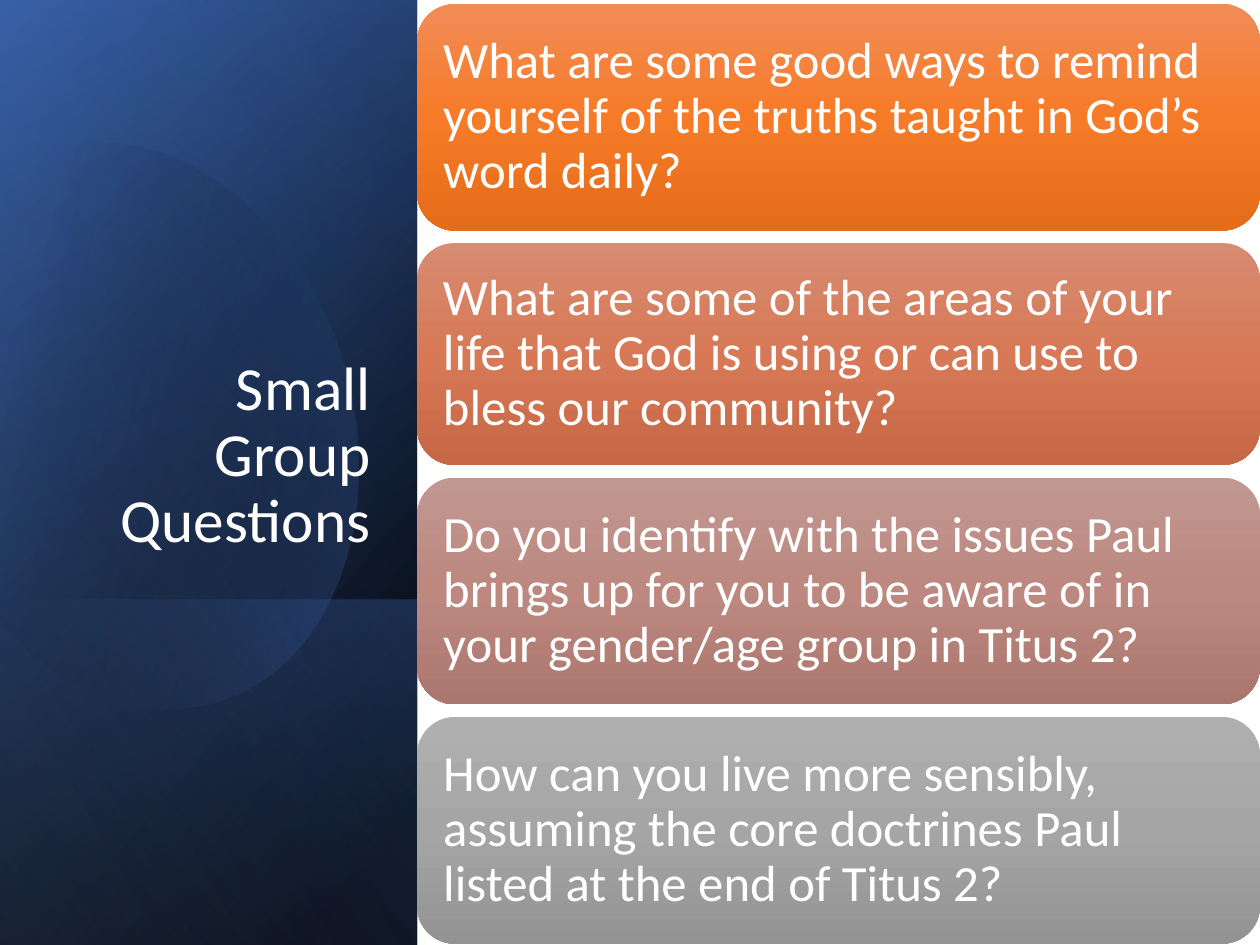
from math import cos, radians, sin

from pptx import Presentation
from pptx.dml.color import RGBColor
from pptx.enum.shapes import MSO_SHAPE as Shape
from pptx.enum.text import MSO_ANCHOR as Anchor, PP_ALIGN as Align
from pptx.oxml import parse_xml
from pptx.oxml.ns import nsdecls, qn
from pptx.util import Inches, Pt

FONT = "Calibri"
WHITE = RGBColor(0xFF, 0xFF, 0xFF)
BLACK = RGBColor(0x00, 0x00, 0x00)
BLUE = RGBColor(0x44, 0x72, 0xC4)
DARK_BLUE = RGBColor(0x2F, 0x55, 0x97)
LIGHT_BLUE = RGBColor(0x8F, 0xAA, 0xDC)

# Question, card height in inches, colours from top to bottom
QUESTIONS = [
    ("What are some good ways to remind yourself of the truths taught in God’s word daily?", 1.8,
     (RGBColor(0xF1, 0x8C, 0x57), RGBColor(0xF6, 0x7B, 0x28), RGBColor(0xE5, 0x6C, 0x19))),
    ("What are some of the areas of your life that God is using or can use to bless our community?", 1.76,
     (RGBColor(0xD7, 0x8B, 0x72), RGBColor(0xD7, 0x79, 0x56), RGBColor(0xC6, 0x68, 0x46))),
    ("Do you identify with the issues Paul brings up for you to be aware of in your gender/age group in Titus 2?", 1.8,
     (RGBColor(0xC1, 0x97, 0x91), RGBColor(0xBC, 0x88, 0x80), RGBColor(0xAA, 0x76, 0x6E))),
    ("How can you live more sensibly, assuming the core doctrines Paul listed at the end of Titus 2?", 1.8,
     (RGBColor(0xAF, 0xAF, 0xAF), RGBColor(0xA5, 0xA5, 0xA5), RGBColor(0x93, 0x93, 0x93))),
]

# Bezier segments of the glow: two controls and an end point each
GLOW_START = (0.96, 1.14)
GLOW_RIGHT = [
    ((1.71, 1.22), (2.44, 1.92), (2.73, 2.9)),
    ((3.07, 4.12), (2.62, 5.31), (1.71, 5.57)),
    ((1.14, 5.74), (0.53, 5.5), (0.07, 5)),
]
GLOW_LEFT_EDGE = [(-0.03, 4.88), (-0.25, 1.66), (-0.15, 1.54)]
GLOW_TOP = [
    ((0.02, 1.37), (0.22, 1.25), (0.45, 1.18)),
    ((0.62, 1.13), (0.79, 1.12), (0.96, 1.14)),
]
GLOW_CENTRE = (1.19, 3.35)
GLOW_ROTATION = 343.9


def fill_gradient(shape, stops, angle):
    """Fill with (position %, colour, opacity %) stops; no line, no shadow."""
    shape.shadow.inherit = False
    shape.line.fill.background()
    shape.fill.background()
    stop_xml = "".join(
        f'<a:gs pos="{position * 1000}"><a:srgbClr val="{colour}">'
        f'<a:alpha val="{opacity * 1000}"/></a:srgbClr></a:gs>'
        for position, colour, opacity in stops)
    gradient = parse_xml(
        f'<a:gradFill {nsdecls("a")} rotWithShape="1"><a:gsLst>{stop_xml}</a:gsLst>'
        f'<a:lin ang="{angle * 60000}" scaled="0"/></a:gradFill>')
    properties = shape._element.spPr
    properties.replace(properties.find(qn("a:noFill")), gradient)


def add_turned_panel(slide, left, top, width, height, stops, angle):
    """Add a mirrored rectangle turned by 90 degrees that covers the given box."""
    shift = (width - height) / 2
    panel = slide.shapes.add_shape(
        Shape.RECTANGLE, Inches(left + shift), Inches(top - shift),
        Inches(height), Inches(width))
    panel.rotation = 90
    panel._element.spPr.xfrm.set("flipH", "1")
    fill_gradient(panel, stops, angle)


def curve_points(start, segments, steps=16):
    """Sample a chain of cubic Bezier segments."""
    points = []
    for first, second, end in segments:
        for step in range(1, steps + 1):
            t = step / steps
            weights = ((1 - t) ** 3, 3 * t * (1 - t) ** 2, 3 * t * t * (1 - t), t ** 3)
            corners = (start, first, second, end)
            points.append(tuple(
                sum(weight * corner[axis] for weight, corner in zip(weights, corners))
                for axis in (0, 1)))
        start = end
    return points


def turn_back(point):
    """Undo the glow's rotation for a point; return it in EMU."""
    angle = radians(-GLOW_ROTATION)
    x, y = (value - centre for value, centre in zip(point, GLOW_CENTRE))
    return (Inches(GLOW_CENTRE[0] + x * cos(angle) - y * sin(angle)),
            Inches(GLOW_CENTRE[1] + x * sin(angle) + y * cos(angle)))


def add_glow(slide, left, top):
    outline = [GLOW_START, *curve_points(GLOW_START, GLOW_RIGHT), *GLOW_LEFT_EDGE,
               *curve_points(GLOW_LEFT_EDGE[-1], GLOW_TOP)]
    points = [turn_back(point) for point in outline]
    builder = slide.shapes.build_freeform(*points[0])
    builder.add_line_segments(points[1:], close=True)
    glow = builder.convert_to_shape(Inches(left), Inches(top))
    glow.rotation = GLOW_ROTATION
    fill_gradient(glow, [(29, BLACK, 0), (100, BLUE, 43)], 30)


def write_text(shape, text, size, alignment, anchor):
    frame = shape.text_frame
    frame.text = text
    frame.word_wrap = True
    frame.vertical_anchor = anchor
    paragraph = frame.paragraphs[0]
    paragraph.alignment = alignment
    paragraph.line_spacing = 0.9
    font = paragraph.runs[0].font
    font.name, font.size, font.color.rgb = FONT, Pt(size), WHITE


def add_title_panel(slide, left, top, width, height):
    box = (left, top, width, height)
    foot_height = 2.74
    foot = (left, top + height - foot_height, width, foot_height)
    add_turned_panel(slide, *box, [(8, BLACK, 100), (100, DARK_BLUE, 100)], 50)
    add_turned_panel(slide, *box, [(0, BLACK, 0), (99, BLUE, 46)], 30)
    add_turned_panel(slide, *foot, [(2, BLUE, 29), (100, BLACK, 30)], 130)
    add_glow(slide, left, top)
    add_turned_panel(slide, *box, [(0, BLACK, 0), (99, LIGHT_BLUE, 11)], 120)
    title = slide.shapes.add_textbox(
        Inches(left + 0.48), Inches(top + 1.84), Inches(2.56), Inches(2.62))
    write_text(title, "Small Group Questions", 35, Align.RIGHT, Anchor.BOTTOM)


def add_question_cards(slide, left, top, width, gap):
    for question, height, colours in QUESTIONS:
        card = slide.shapes.add_shape(
            Shape.ROUNDED_RECTANGLE, Inches(left), Inches(top), Inches(width), Inches(height))
        stops = [(position, colour, 100) for position, colour in zip((0, 50, 100), colours)]
        fill_gradient(card, stops, 90)
        write_text(card, question, 29, Align.LEFT, Anchor.MIDDLE)
        frame = card.text_frame
        frame.margin_left = frame.margin_right = Inches(0.12)
        frame.margin_top = frame.margin_bottom = Inches(0.12)
        top += height + gap


def main():
    presentation = Presentation()
    presentation.slide_width, presentation.slide_height = Inches(10), Inches(7.5)
    slide = presentation.slides.add_slide(presentation.slide_layouts[6])
    slide.background.fill.solid()
    slide.background.fill.fore_color.rgb = WHITE
    add_title_panel(slide, 0, 0, 3.31, 7.5)
    add_question_cards(slide, 3.31, 0.03, 6.69, 0.1)
    presentation.save("out.pptx")


if __name__ == "__main__":
    main()
